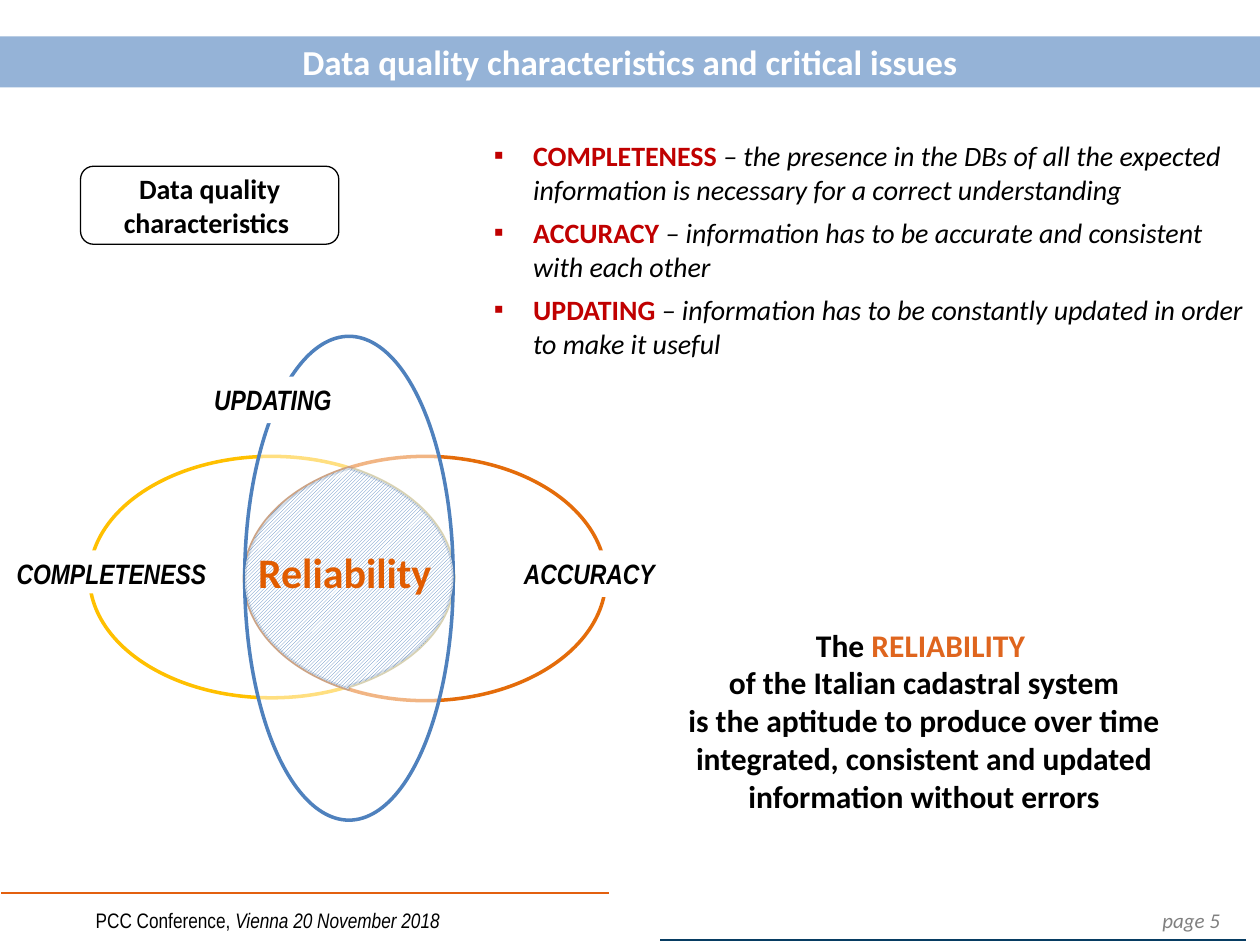
"""Build the slide on data quality characteristics and critical issues."""
import math

import lxml.etree
import pptx
import pptx.dml.color
import pptx.enum.dml
import pptx.enum.shapes
import pptx.enum.text
import pptx.oxml.ns
import pptx.util

Pt = pptx.util.Pt
qn = pptx.oxml.ns.qn
SHAPES = pptx.enum.shapes.MSO_SHAPE
CENTER = pptx.enum.text.PP_ALIGN.CENTER
LEFT = pptx.enum.text.PP_ALIGN.LEFT
MIDDLE = pptx.enum.text.MSO_ANCHOR.MIDDLE
COLORS = {
    name: pptx.dml.color.RGBColor.from_string(value)
    for name, value in {
        "white": "FFFFFF", "black": "000000", "gray": "808080",
        "band": "95B3D7", "red": "C00000", "rust": "DF651E",
        "reliability": "E15C00", "yellow": "FFC000", "orange": "E46C0A",
        "blue": "4F81BD", "lens": "3A5F8C", "rule": "E3600F", "navy": "073C62",
    }.items()
}


def write(paragraph, runs, size, font="Calibri", color="black", bold=None, align=CENTER):
    """Fill a paragraph with (text, run formatting) pairs."""
    paragraph.alignment = align
    paragraph.font.size = Pt(size)
    paragraph.font.name = font
    paragraph.font.bold = bold
    paragraph.font.color.rgb = COLORS[color]
    for text, formatting in runs:
        run = paragraph.add_run()
        run.text = text
        if "color" in formatting:
            run.font.color.rgb = COLORS[formatting["color"]]
        if "bold" in formatting:
            run.font.bold = formatting["bold"]
        if "italic" in formatting:
            run.font.italic = formatting["italic"]


def set_opacity(fill_parent, percent):
    """Make the solid fill below an element partly transparent."""
    color = fill_parent.find(qn("a:solidFill"))[0]
    lxml.etree.SubElement(color, qn("a:alpha")).set("val", str(percent * 1000))


presentation = pptx.Presentation()
presentation.slide_width, presentation.slide_height = Pt(720), Pt(540)
slide = presentation.slides.add_slide(presentation.slide_layouts[1])

title = slide.shapes.title
title.left, title.top, title.width, title.height = Pt(0), Pt(20.8), Pt(720), Pt(29.2)
title.fill.solid()
title.fill.fore_color.rgb = COLORS["band"]
title.text_frame.vertical_anchor = MIDDLE
write(title.text_frame.paragraphs[0],
      [("Data quality characteristics and critical issues", {})], 20, color="white", bold=True)

body = slide.placeholders[1]
body.left, body.top, body.width, body.height = Pt(275), Pt(75.6), Pt(444.5), Pt(135)
frame = body.text_frame
frame.auto_size = pptx.enum.text.MSO_AUTO_SIZE.NONE
definitions = [
    ("COMPLETENESS ", "– the presence in the DBs of all the expected information is "
     "necessary for a correct understanding"),
    ("ACCURACY", " – information has to be accurate and consistent with each other"),
    ("UPDATING ", "– information has to be constantly updated in order to make it useful"),
]
for index, (term, meaning) in enumerate(definitions):
    paragraph = frame.add_paragraph() if index else frame.paragraphs[0]
    properties = paragraph._p.get_or_add_pPr()
    properties.set("marL", str(Pt(22.5)))
    properties.set("indent", str(-Pt(22.5)))
    lxml.etree.SubElement(properties, qn("a:buChar")).set("char", "▪")
    paragraph.space_before = Pt(5.6 if index else 0)
    write(paragraph, [(term, {"color": "red", "bold": True}), (meaning, {"italic": True})],
          16, align=LEFT)

statements = [
    ((46, 95, 147.6, 44.6), 16, "black", [[("Data quality characteristics ", {})]]),
    ((356.4, 355, 343.4, 113), 18, None, [
        [("The", {}), (" RELIABILITY ", {"color": "rust"})],
        [("of the Italian cadastral system", {})],
        [("is the aptitude to produce over time integrated, consistent and updated "
          "information without errors", {})],
    ]),
]
for place, size, outline, paragraphs in statements:
    shape = slide.shapes.add_shape(SHAPES.ROUNDED_RECTANGLE, *map(Pt, place))
    shape.shadow.inherit = False
    if outline:
        shape.fill.solid()
        shape.fill.fore_color.rgb = COLORS["white"]
        shape.line.color.rgb = COLORS[outline]
        shape.line.width = Pt(0.75)
    else:
        shape.fill.background()
        shape.line.fill.background()
    frame = shape.text_frame
    frame.word_wrap = True
    frame.vertical_anchor = MIDDLE
    frame.margin_left = frame.margin_right = frame.margin_top = frame.margin_bottom = Pt(3)
    for index, runs in enumerate(paragraphs):
        paragraph = frame.add_paragraph() if index else frame.paragraphs[0]
        write(paragraph, runs, size, bold=True)

ellipses = {
    "COMPLETENESS": ("yellow", (51.2, 260.8, 208, 138), (1.4, 314.6, 124.6, 24.5), CENTER),
    "ACCURACY": ("orange", (139.8, 260.8, 206.4, 139.6), (292.3, 314.6, 90.7, 26.6), LEFT),
    "UPDATING": ("blue", (139.8, 192.2, 119.2, 276.5), (115.2, 215.3, 82.8, 26.6), LEFT),
}
for text, (color, ellipse_place, label_place, align) in ellipses.items():
    group = slide.shapes.add_group_shape()
    ellipse = group.shapes.add_shape(SHAPES.OVAL, *map(Pt, ellipse_place))
    ellipse.shadow.inherit = False
    ellipse.fill.solid()
    ellipse.fill.fore_color.rgb = COLORS["white"]
    set_opacity(ellipse._element.spPr, 50)
    ellipse.line.color.rgb = COLORS[color]
    ellipse.line.width = Pt(2)
    label = group.shapes.add_textbox(*map(Pt, label_place))
    label.fill.solid()
    label.fill.fore_color.rgb = COLORS["white"]
    label.text_frame.word_wrap = False
    write(label.text_frame.paragraphs[0], [(text, {"italic": True})], 16,
          "Arial Narrow", bold=True, align=align)

lens_points = []
middle = 199.2
for name, start in (("COMPLETENESS", 0), ("ACCURACY", math.pi)):
    left, top, width, height = ellipses[name][1]
    center_x, center_y = left + width / 2, top + height / 2
    reach = math.acos(abs(middle - center_x) / (width / 2))
    for step in range(-16, 17):
        angle = start + reach * step / 16
        lens_points.append((Pt(center_x + width / 2 * math.cos(angle)),
                            Pt(center_y + height / 2 * math.sin(angle))))
group = slide.shapes.add_group_shape()
builder = group.shapes.build_freeform(*lens_points[0])
builder.add_line_segments(lens_points[1:], close=True)
lens = builder.convert_to_shape()
lens.shadow.inherit = False
lens.fill.patterned()
lens.fill.pattern = pptx.enum.dml.MSO_PATTERN.DARK_UPWARD_DIAGONAL
lens.fill.fore_color.rgb = COLORS["blue"]
lens.fill.back_color.rgb = COLORS["white"]
lens.line.color.rgb = COLORS["lens"]
lens.line.width = Pt(2)
set_opacity(lens._element.spPr.find(qn("a:ln")), 20)
label = group.shapes.add_textbox(Pt(140.4), Pt(309), Pt(120.2), Pt(36))
label.text_frame.word_wrap = False
write(label.text_frame.paragraphs[0], [("Reliability", {})], 24,
      color="reliability", bold=True, align=LEFT)

for start_x, end_x, y, color in ((0.7, 347.8, 510.2, "rule"), (377.3, 712, 537, "navy")):
    line = slide.shapes.add_connector(pptx.enum.shapes.MSO_CONNECTOR.STRAIGHT,
                                      Pt(start_x), Pt(y), Pt(end_x), Pt(y))
    line.line.color.rgb = COLORS[color]
    line.line.width = Pt(1)
    lxml.etree.SubElement(line._element.spPr, qn("a:effectLst"))

footers = [
    ((43.2, 514.8, 219.6, 21.6), "Arial Narrow", "black", False,
     [("PCC Conference, ", {}), ("Vienna 20 November 2018", {"italic": True})]),
    ((644.4, 514.8, 72.7, 21.6), "Calibri", "gray", True, [("page 5", {"italic": True})]),
]
for place, font, color, wrap, runs in footers:
    footer = slide.shapes.add_textbox(*map(Pt, place))
    footer.text_frame.word_wrap = wrap
    write(footer.text_frame.paragraphs[0], runs, 12, font, color)

presentation.save("out.pptx")
